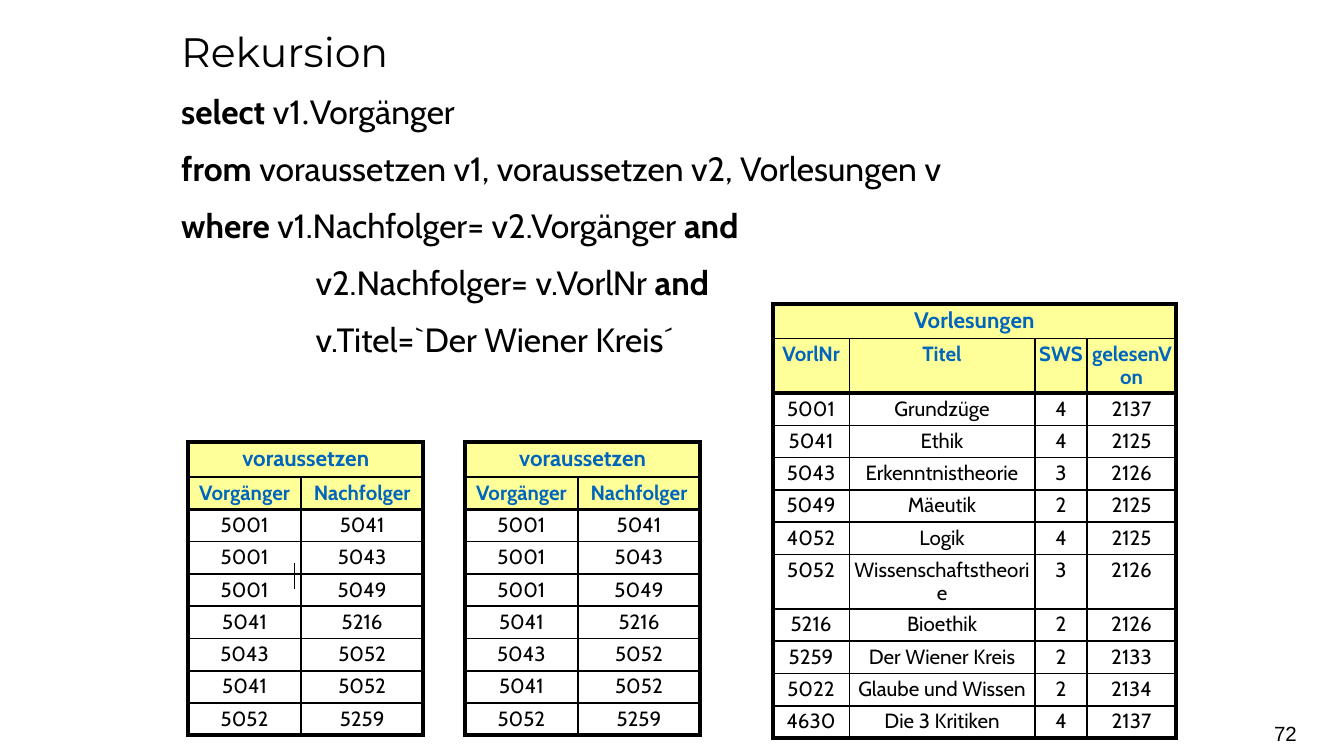
from lxml import etree
from pptx import Presentation
from pptx.dml.color import RGBColor
from pptx.enum import shapes, text
from pptx.oxml import ns
from pptx.util import Inches, Pt

BLACK = RGBColor(0x00, 0x00, 0x00)
BLUE = RGBColor(0x00, 0x65, 0xBD)
CREAM = RGBColor(0xFF, 0xFF, 0x99)
BODY = "Cabin"
QUERY = [
    (0, [("select", True), (" v1", False), (".", False, "Times New Roman"),
         ("Vorgänger", False)]),
    (0, [("from", True),
         (" voraussetzen v1, voraussetzen v2, Vorlesungen v", False)]),
    (0, [("where", True), (" v1.Nachfolger= v2.Vorgänger ", False),
         ("and", True)]),
    (1, [("v2.Nachfolger= v.VorlNr ", False), ("and", True)]),
    (1, [("v.Titel=`Der Wiener Kreis´", False)]),
]
NEEDS = [
    ("Vorgänger", "Nachfolger"),
    ("5001", "5041"),
    ("5001", "5043"),
    ("5001", "5049"),
    ("5041", "5216"),
    ("5043", "5052"),
    ("5041", "5052"),
    ("5052", "5259"),
]
COURSES = [
    ("VorlNr", "Titel", "SWS", "gelesenVon"),
    ("5001", "Grundzüge", "4", "2137"),
    ("5041", "Ethik", "4", "2125"),
    ("5043", "Erkenntnistheorie", "3", "2126"),
    ("5049", "Mäeutik", "2", "2125"),
    ("4052", "Logik", "4", "2125"),
    ("5052", "Wissenschaftstheorie", "3", "2126"),
    ("5216", "Bioethik", "2", "2126"),
    ("5259", "Der Wiener Kreis", "2", "2133"),
    ("5022", "Glaube und Wissen", "2", "2134"),
    ("4630", "Die 3 Kritiken", "4", "2137"),
]


def style(font, name, size, color=BLACK, bold=False):
    font.name, font.size, font.bold = name, Pt(size), bold
    font.color.rgb = color


def add_box(slide, left, top, width, height):
    frame = slide.shapes.add_textbox(
        Inches(left), Inches(top), Inches(width), Inches(height)).text_frame
    frame.word_wrap = True
    return frame


def add_title(slide):
    para = add_box(slide, 1.25, 0.06, 7.5, 0.62).paragraphs[0]
    para.text = "Rekursion"
    para.line_spacing = 1.25
    style(para.font, "Montserrat", 22)


def add_query(slide):
    frame = add_box(slide, 1.25, 0.63, 7.31, 2.68)
    for row, (depth, runs) in enumerate(QUERY):
        para = frame.add_paragraph() if row else frame.paragraphs[0]
        if row:
            para.space_before = Pt(8.9)
        if depth:
            props = para._p.get_or_add_pPr()
            props.set("marL", str(Inches(depth)))
            props.set("indent", "0")
        for words, bold, *face in runs:
            run = para.add_run()
            run.text = words
            style(run.font, face[0] if face else BODY, 18, BLACK, bold)


def add_number(slide):
    frame = add_box(slide, 7.41, 5.31, 2.24, 0.3)
    frame.margin_left = frame.margin_right = 0
    frame.vertical_anchor = text.MSO_ANCHOR.MIDDLE
    para = frame.paragraphs[0]
    para.text = "72"
    para.alignment = text.PP_ALIGN.RIGHT
    style(para.font, "Arial", 11)


def add_cursor(slide):
    x = Inches(2.19)
    line = slide.shapes.add_connector(
        shapes.MSO_CONNECTOR.STRAIGHT, x, Inches(4.19), x, Inches(4.38))
    line.line.color.rgb = BLACK
    line.line.width = Pt(0.75)
    etree.SubElement(line._element.spPr, ns.qn("a:effectLst"))


def set_edges(cell, thick):
    props = cell._tc.get_or_add_tcPr()
    for spot, side in enumerate("LRTB"):
        width = Pt(2.25 if thick[side] else 1)
        edge = etree.Element(ns.qn("a:ln" + side), w=str(width))
        fill = etree.SubElement(edge, ns.qn("a:solidFill"))
        etree.SubElement(fill, ns.qn("a:srgbClr"), val=str(BLACK))
        props.insert(spot, edge)


def fill_cell(cell, words, row):
    head = row < 2
    cell.margin_left = cell.margin_right = 0
    cell.margin_top = cell.margin_bottom = Pt(2.7)
    para = cell.text_frame.paragraphs[0]
    para.text = words
    para.alignment = text.PP_ALIGN.CENTER
    para.line_spacing = 0.9
    style(para.font, BODY, 11 if row else 12, BLUE if head else BLACK, head)
    if head:
        cell.fill.solid()
        cell.fill.fore_color.rgb = CREAM
    else:
        cell.fill.background()


def add_grid(slide, left, top, name, rows, widths, head=0.23):
    heights = [0.26, head] + [0.23] * (len(rows) - 1)
    table = slide.shapes.add_table(
        len(heights), len(widths), Inches(left), Inches(top),
        Inches(sum(widths)), Inches(sum(heights))).table
    table.first_row = table.horz_banding = False
    for col, width in zip(table.columns, widths):
        col.width = Inches(width)
    for row, height in zip(table.rows, heights):
        row.height = Inches(height)
    title = [name] + [""] * (len(widths) - 1)
    last = len(widths) - 1
    for r, values in enumerate([title, *rows]):
        for c, words in enumerate(values):
            cell = table.cell(r, c)
            fill_cell(cell, words, r)
            set_edges(cell, {
                "L": c == 0 or r == 0, "R": c == last or r == 0,
                "T": r in (0, 2), "B": r in (1, len(rows))})
    table.cell(0, 0).merge(table.cell(0, last))


def main():
    """Build the slide on a recursive query and its tables."""
    deck = Presentation()
    deck.slide_width, deck.slide_height = Inches(10), Inches(10 * 9 / 16)
    slide = deck.slides.add_slide(deck.slide_layouts[6])
    add_title(slide)
    add_query(slide)
    add_cursor(slide)
    add_grid(slide, 5.75, 2.26, "Vorlesungen", COURSES,
             [0.57, 1.38, 0.39, 0.66], 0.39)
    for left in (1.4, 3.46):
        add_grid(slide, left, 3.29, "voraussetzen", NEEDS, [0.84, 0.91])
    add_number(slide)
    deck.save("out.pptx")


if __name__ == "__main__":
    main()
